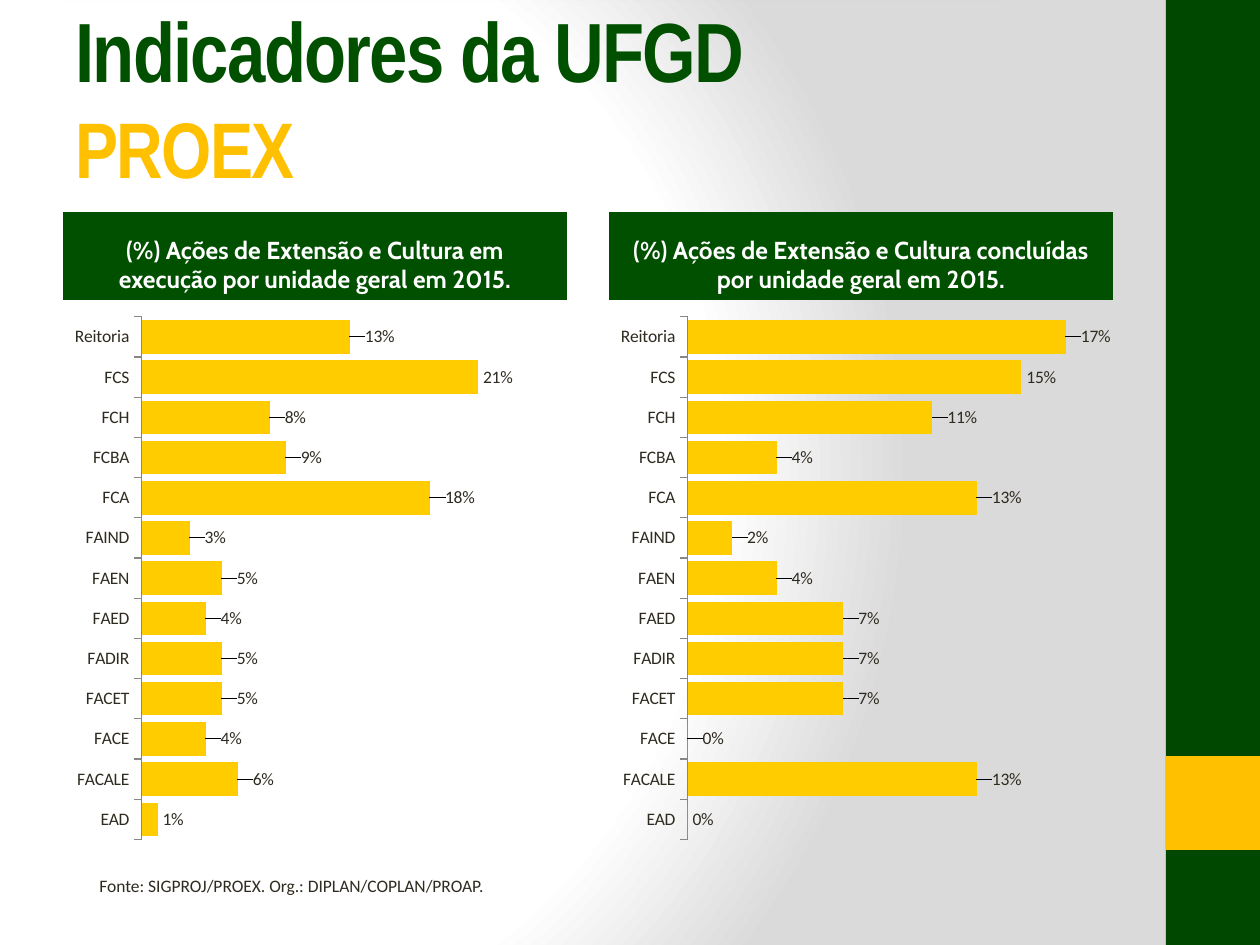
from dataclasses import dataclass

import lxml.etree
import pptx
import pptx.chart.data
import pptx.dml.color
import pptx.enum.chart
import pptx.enum.shapes
import pptx.enum.text
import pptx.oxml
import pptx.oxml.ns
import pptx.util

PX_PER_INCH = 126
COLORS = {
    "side": "004800",
    "green": "005000",
    "gold": "FFC000",
    "bar": "FFCC00",
    "text": "2F2B20",
    "white": "FFFFFF",
    "gray": "DADADA",
    "axis": "868686",
}
UNITS = ["EAD", "FACALE", "FACE", "FACET", "FADIR", "FAED", "FAEN",
         "FAIND", "FCA", "FCBA", "FCH", "FCS", "Reitoria"]
SHIFTED_LABELS = [*range(1, 11), 12]
PLOT_LAYOUT = {"layoutTarget": "inner", "xMode": "edge", "yMode": "edge",
               "x": 0.156, "y": 0.031, "w": 0.795, "h": 0.961}


@dataclass
class Panel:
    left: int
    heading: str
    percents: list[int]
    axis_maximum: float


PANELS = [
    Panel(63, "(%) Ações de Extensão e Cultura em execução por unidade geral em 2015.",
          [1, 6, 4, 5, 5, 4, 5, 3, 18, 9, 8, 21, 13], 0.25),
    Panel(609, "(%) Ações de Extensão e Cultura concluídas por unidade geral em 2015.",
          [0, 13, 0, 7, 7, 7, 4, 2, 13, 4, 11, 15, 17], 0.18),
]


def px(length: int) -> int:
    return round(length * pptx.util.Inches(1) / PX_PER_INCH)


def color(name: str) -> pptx.dml.color.RGBColor:
    return pptx.dml.color.RGBColor.from_string(COLORS[name])


def fill(shape, name: str) -> None:
    shape.fill.solid()
    shape.fill.fore_color.rgb = color(name)


def place(shape, left: int, top: int, width: int, height: int) -> None:
    shape.left, shape.top = px(left), px(top)
    shape.width, shape.height = px(width), px(height)


def style_font(font, face: str, size: int, name: str, bold: bool = False) -> None:
    font.name, font.size, font.bold = face, pptx.util.Pt(size), bold
    font.color.rgb = color(name)


def make_layout(values: dict):
    """Build a manual chart layout element."""
    namespace = pptx.oxml.ns.nsdecls("c")
    items = "".join(f'<c:{key} val="{value}"/>' for key, value in values.items())
    return pptx.oxml.parse_xml(
        f"<c:layout {namespace}><c:manualLayout>{items}</c:manualLayout></c:layout>")


def set_background(slide) -> None:
    background = slide.background.fill
    background.gradient()
    gradient = background._fill._gradFill
    for child in list(gradient):
        gradient.remove(child)
    stops = [(0, "white"), (75, "white"), (100, "gray")]
    namespace = pptx.oxml.ns.nsdecls("a")
    stop_xml = "".join(
        f'<a:gs pos="{position * 1000}"><a:srgbClr val="{COLORS[name]}"/></a:gs>'
        for position, name in stops)
    gradient.append(pptx.oxml.parse_xml(f"<a:gsLst {namespace}>{stop_xml}</a:gsLst>"))
    gradient.append(pptx.oxml.parse_xml(
        f'<a:path {namespace} path="circle">'
        '<a:fillToRect l="20000" t="50000" r="100000" b="50000"/></a:path>'))


def add_block(slide, top: int, height: int, name: str) -> None:
    block = slide.shapes.add_shape(
        pptx.enum.shapes.MSO_SHAPE.RECTANGLE, px(1166), px(top), px(94), px(height))
    fill(block, name)
    block.line.fill.background()
    block.shadow.inherit = False


def set_title(title) -> None:
    place(title, 63, 38, 1050, 117)
    frame = title.text_frame
    frame.auto_size = pptx.enum.text.MSO_AUTO_SIZE.NONE
    frame.vertical_anchor = pptx.enum.text.MSO_ANCHOR.MIDDLE
    frame.text = "Indicadores da UFGD\vPROEX"
    paragraph = frame.paragraphs[0]
    paragraph.alignment = pptx.enum.text.PP_ALIGN.LEFT
    for run, size, name in zip(paragraph.runs, (48, 45), ("green", "gold")):
        style_font(run.font, "Arial Narrow", size, name, True)
        run.font._element.set("spc", "-100")


def set_heading(heading, panel: Panel) -> None:
    place(heading, panel.left, 212, 504, 88)
    fill(heading, "green")
    frame = heading.text_frame
    frame.auto_size = pptx.enum.text.MSO_AUTO_SIZE.NONE
    frame.vertical_anchor = pptx.enum.text.MSO_ANCHOR.BOTTOM
    frame.text = panel.heading
    paragraph = frame.paragraphs[0]
    paragraph.alignment = pptx.enum.text.PP_ALIGN.CENTER
    style_font(paragraph.runs[0].font, "Cabin", 14, "white", True)
    # Soft, mirrored shadow
    heading._element.spPr.append(pptx.oxml.parse_xml(
        f'<a:effectLst {pptx.oxml.ns.nsdecls("a")}>'
        '<a:outerShdw blurRad="190500" dist="152400" dir="5400000" sx="90000" '
        'sy="-19000" rotWithShape="0"><a:srgbClr val="000000">'
        '<a:alpha val="25000"/></a:srgbClr></a:outerShdw></a:effectLst>'))


def add_bar_chart(slide, panel: Panel) -> None:
    data = pptx.chart.data.CategoryChartData(number_format="0%")
    data.categories = UNITS
    data.add_series("Series 1", [percent / 100 for percent in panel.percents])
    chart = slide.shapes.add_chart(
        pptx.enum.chart.XL_CHART_TYPE.BAR_CLUSTERED,
        px(panel.left), px(300), px(504), px(544), data).chart
    chart.has_legend = chart.has_title = False
    style_font(chart.font, "Calibri", 10, "text")

    # Axes
    value_axis, category_axis = chart.value_axis, chart.category_axis
    value_axis.minimum_scale, value_axis.maximum_scale = 0, panel.axis_maximum
    value_axis.has_major_gridlines = value_axis.visible = False
    category_axis.major_tick_mark = pptx.enum.chart.XL_TICK_MARK.OUTSIDE
    category_axis.format.line.color.rgb = color("axis")

    # Bars and labels
    plot = chart.plots[0]
    plot.gap_width = 20
    plot.vary_by_categories = False
    series = plot.series[0]
    fill(series.format, "bar")
    outside = pptx.enum.chart.XL_LABEL_POSITION.OUTSIDE_END
    labels = series.data_labels
    labels.show_value = True
    labels.number_format, labels.number_format_is_linked = "0%", False
    labels.position = outside
    for index in SHIFTED_LABELS:
        series.points[index].data_label.position = outside
    for label in labels._element.findall(pptx.oxml.ns.qn("c:dLbl")):
        label.insert(1, make_layout({"x": 0.02, "y": 0}))

    # Plot area
    plot_area = chart._chartSpace.chart.plotArea
    for old_layout in plot_area.findall(pptx.oxml.ns.qn("c:layout")):
        plot_area.remove(old_layout)
    plot_area.insert(0, make_layout(PLOT_LAYOUT))


def add_source_note(slide) -> None:
    box = slide.shapes.add_textbox(px(87), px(869), px(427), px(34))
    box.text_frame.word_wrap = True
    box.text_frame.text = "Fonte: SIGPROJ/PROEX. Org.: DIPLAN/COPLAN/PROAP."
    style_font(box.text_frame.paragraphs[0].runs[0].font, "Calibri", 10, "text")


def main() -> None:
    presentation = pptx.Presentation()
    presentation.slide_width, presentation.slide_height = px(1260), px(945)
    slide = presentation.slides.add_slide(presentation.slide_layouts[4])
    set_background(slide)

    # Side band
    add_block(slide, 0, 945, "side")
    add_block(slide, 756, 94, "gold")

    # Title, then one heading and chart per panel
    placeholders = {item.placeholder_format.idx: item for item in slide.placeholders}
    set_title(slide.shapes.title)
    for panel, heading_index in zip(PANELS, (1, 3)):
        set_heading(placeholders[heading_index], panel)
        add_bar_chart(slide, panel)
        unused = placeholders[heading_index + 1]._element
        unused.getparent().remove(unused)

    add_source_note(slide)
    presentation.save("out.pptx")


if __name__ == "__main__":
    main()
